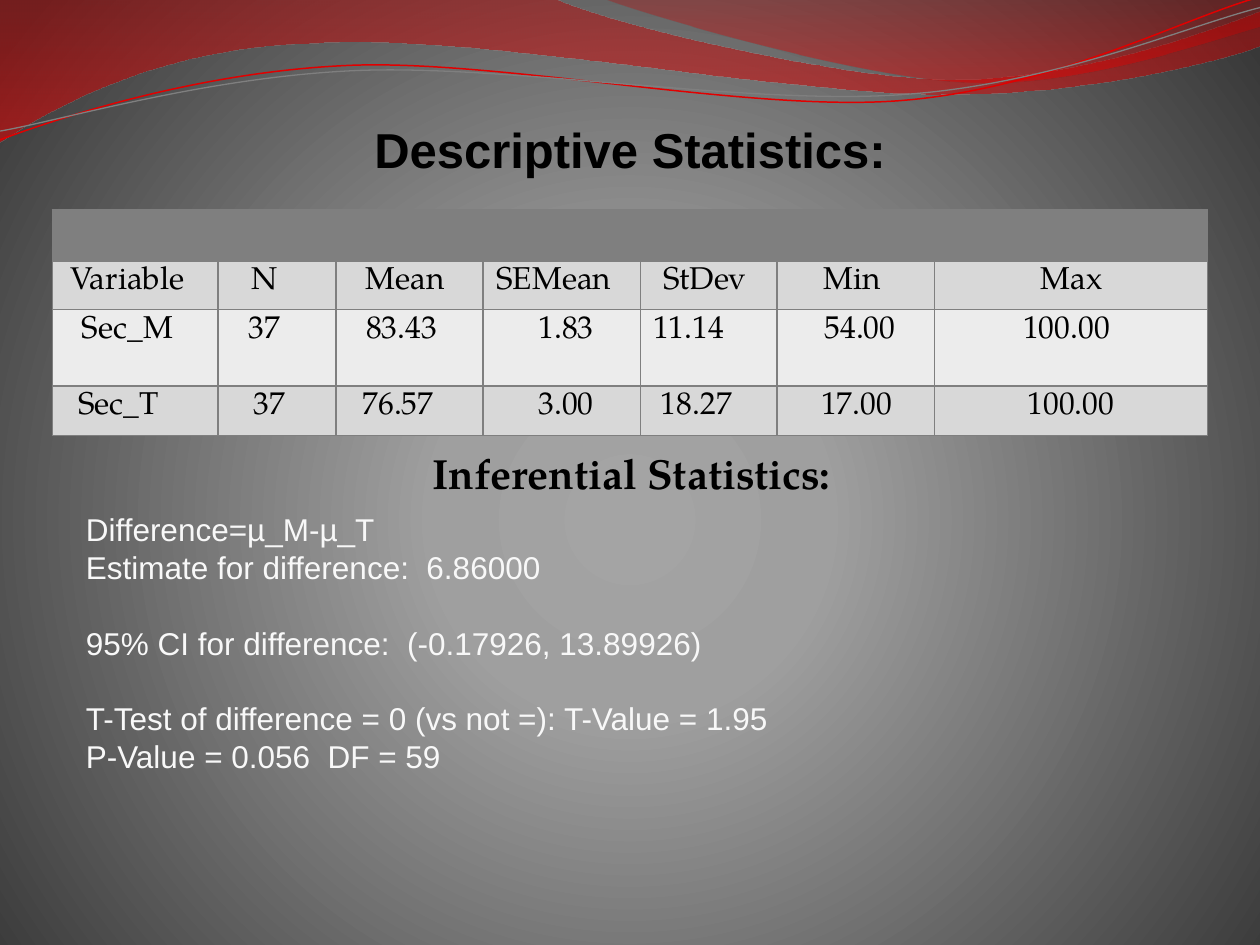
from lxml import etree
from pptx import Presentation
from pptx.dml.color import RGBColor
from pptx.enum import text
from pptx.oxml import ns
from pptx.util import Pt

COLORS = {
    "black": "000000", "white": "F8F8F8", "gray": "7F7F7F",
    "band": "D8D8D8", "light": "ECECEC",
    "red": "E10000", "dark_red": "BD0000", "bright_red": "E70000",
    "center": "A4A4A4", "middle": "9F9F9F", "edge": "383838",
}
SANS, SERIF = "Arial", "TeX Gyre Pagella"
COLUMNS = [94.5, 67.5, 84, 90, 78, 90, 156]
ROWS = [29.5, 27.5, 43.5, 28.5]
CELLS = [
    [("Variable", -5), ("N", -7.5), ("Mean", -3), ("SEMean", -5),
     ("StDev", -2.5), ("Min", -2.5), ("Max", 0)],
    [("Sec_M", -5), ("37", -7.5), ("83.43", -5), ("1.83", 2),
     ("11.14", -12), ("54.00", 2), ("100.00", -3)],
    [("Sec_T", -10), ("37", -5), ("76.57", -7), ("3.00", 2),
     ("18.27", -7.5), ("17.00", 0), ("100.00", -0.5)],
]
RESULTS = [
    ("Difference=µ_M-µ_T", 0),
    ("Estimate for difference:  6.86000", 0),
    ("95% CI for difference:  (-0.17926, 13.89926)", 21.6),
    ("T-Test of difference = 0 (vs not =): T-Value = 1.95", 21.6),
    ("P-Value = 0.056  DF = 59", 0),
]
WIDE_WAVE = [
    [(0, 0)], [(316.8, -0.7)],
    [(342.7, 12.2), (478, 45.4), (545.8, 45.4)],
    [(614.2, 45.4), (689.8, 18.7), (720, 6.5)], [(720.7, 25.9)],
    [(707.8, 31.7), (626.4, 54.7), (537.1, 54)],
    [(447.8, 54), (275, 20.2), (185, 24.5)],
    [(92.9, 25.9), (33.1, 59.8), (-0.7, 81.4)]]
CORNER_WAVE = [
    [(344.9, -0.7)], [(366.5, 7.9), (491, 44.6), (553.7, 46.8)],
    [(616.3, 49.7), (691.9, 23), (720, 15.1)], [(720, 0)]]
RED_LINE = [
    [(0, 79.9)], [(34.6, 67), (113.8, 41), (199.4, 37.4)],
    [(284.4, 33.8), (427, 64.1), (513.4, 57.6)],
    [(599.8, 51.1), (675.4, 10.8), (718.6, -1.4)]]
GRAY_LINE = [
    [(0, 74.9)], [(33.8, 69.1), (118.1, 43.9), (203.8, 40.3)],
    [(290.2, 36.7), (429.8, 60.5), (516.2, 54)],
    [(601.9, 48.2), (677.5, 15.1), (720, 4.3)]]


def rgb(name):
    """Return the named colour."""
    return RGBColor.from_string(COLORS[name])


def element(parent, tag, **attributes):
    """Add a drawing element with the given attributes."""
    child = etree.SubElement(parent, ns.qn(tag))
    for key, value in attributes.items():
        child.set(key, str(value))
    return child


def set_gradient(fill, holder, stops, circle=False):
    """Fill with (position, colour, opacity) stops, downward or circular."""
    fill.gradient()
    gradient = holder.find(".//" + ns.qn("a:gradFill"))
    for child in list(gradient):
        gradient.remove(child)
    stop_list = element(gradient, "a:gsLst")
    for position, name, opacity in stops:
        stop = element(stop_list, "a:gs", pos=position * 1000)
        color = element(stop, "a:srgbClr", val=COLORS[name])
        if opacity < 100:
            element(color, "a:alpha", val=opacity * 1000)
    if circle:
        route = element(gradient, "a:path", path="circle")
        element(route, "a:fillToRect", l=10000, t=110000, r=10000, b=100000)
    else:
        element(gradient, "a:lin", ang=5400000, scaled=1)


def add_outline(page, left, top, moves, closed):
    """Draw a freeform whose three-point moves are cubic curves."""
    places = [(Pt(left + x), Pt(top + y)) for move in moves for x, y in move]
    builder = page.shapes.build_freeform(*places[0])
    builder.add_line_segments(places[1:], close=closed)
    shape = builder.convert_to_shape()
    shape.shadow.inherit = False
    segments = iter(list(shape._element.iter(ns.qn("a:lnTo"))))
    for move in moves[1:]:
        first, *others = [next(segments) for point in move]
        if others:
            first.tag = ns.qn("a:cubicBezTo")
        for segment in others:
            first.append(segment[0])
            segment.getparent().remove(segment)
    return shape


def add_waves(page, left, top):
    """Draw the two red waves and the two thin curves."""
    for moves, stops in (
            (WIDE_WAVE, [(0, "dark_red", 45), (100, "bright_red", 55)]),
            (CORNER_WAVE, [(0, "dark_red", 30), (80, "red", 45)])):
        wave = add_outline(page, left, top, moves, True)
        set_gradient(wave.fill, wave._element.spPr, stops)
        wave.line.fill.background()
    for moves, name, width in ((RED_LINE, "red", 0.85),
                               (GRAY_LINE, "gray", 0.75)):
        curve = add_outline(page, left, top, moves, False)
        curve.fill.background()
        curve.line.color.rgb = rgb(name)
        curve.line.width = Pt(width)


def style(para, font, size, color, bold=False):
    """Format every run of a paragraph."""
    for span in para.runs:
        span.font.name, span.font.size = font, Pt(size)
        span.font.bold, span.font.color.rgb = bold, rgb(color)


def add_text(page, left, top, width, height, lines, wrap=True):
    """Add a text box with one paragraph per line and return its frame."""
    box = page.shapes.add_textbox(Pt(left), Pt(top), Pt(width), Pt(height))
    frame = box.text_frame
    frame.word_wrap = wrap
    frame.text = "\n".join(lines)
    return frame


def add_title(page, left, top, width, height):
    """Add the centred slide title."""
    frame = add_text(page, left, top, width, height, ["Descriptive Statistics:"])
    frame.vertical_anchor = text.MSO_ANCHOR.BOTTOM
    frame.margin_left = frame.margin_right = frame.margin_bottom = 0
    para = frame.paragraphs[0]
    para.alignment = text.PP_ALIGN.CENTER
    style(para, SANS, 28, "black", True)


def format_cell(cell, fill, shift=0):
    """Set the fill, borders and margins, which move centred text by shift."""
    cell.fill.solid()
    cell.fill.fore_color.rgb = rgb(fill)
    cell.margin_left = Pt(4.6 + max(2 * shift, 0))
    cell.margin_right = Pt(3.6 + max(-2 * shift, 0))
    cell.margin_top, cell.margin_bottom = Pt(3.2), 0
    properties = cell._tc.get_or_add_tcPr()
    for index, side in enumerate(("a:lnL", "a:lnR", "a:lnT", "a:lnB")):
        line = etree.Element(ns.qn(side), w=str(Pt(1)))
        element(element(line, "a:solidFill"), "a:srgbClr", val=COLORS["gray"])
        properties.insert(index, line)


def add_statistics(page, left, top):
    """Add the table of descriptive statistics under an empty header band."""
    frame = page.shapes.add_table(len(ROWS), len(COLUMNS), Pt(left), Pt(top),
                                  Pt(sum(COLUMNS)), Pt(sum(ROWS)))
    table = frame.table
    table.first_row = table.horz_banding = False
    for column, width in zip(table.columns, COLUMNS):
        column.width = Pt(width)
    for row, height in zip(table.rows, ROWS):
        row.height = Pt(height)
    for cell in table.rows[0].cells:
        format_cell(cell, "gray")
    for index, values in enumerate(CELLS, 1):
        for cell, (value, shift) in zip(table.rows[index].cells, values):
            format_cell(cell, "band" if index % 2 else "light", shift)
            cell.text_frame.text = value
            para = cell.text_frame.paragraphs[0]
            para.alignment = text.PP_ALIGN.CENTER
            style(para, SERIF, 18, "black")


def add_inference(page, left, top):
    """Add the second heading and the test results below it."""
    heading = add_text(page, left + 198, top, 255, 36,
                       ["Inferential Statistics:"], wrap=False)
    style(heading.paragraphs[0], SERIF, 24, "black", True)
    results = add_text(page, left, top + 36, 642, 181.5,
                       [line for line, gap in RESULTS])
    for para, (line, gap) in zip(results.paragraphs, RESULTS):
        para.line_spacing, para.space_before = Pt(21.6), Pt(gap)
        style(para, SANS, 18, "white")


def main():
    """Build the deck and save it."""
    deck = Presentation()
    deck.slide_width, deck.slide_height = Pt(720), Pt(540)
    page = deck.slides.add_slide(deck.slide_layouts[6])
    set_gradient(page.background.fill, page._element,
                 [(0, "center", 100), (25, "middle", 100), (100, "edge", 100)],
                 circle=True)
    add_waves(page, 0, 0)
    add_title(page, 36, 55.5, 648, 46.5)
    add_statistics(page, 30, 120)
    add_inference(page, 42, 252)
    deck.save("out.pptx")


if __name__ == "__main__":
    main()
